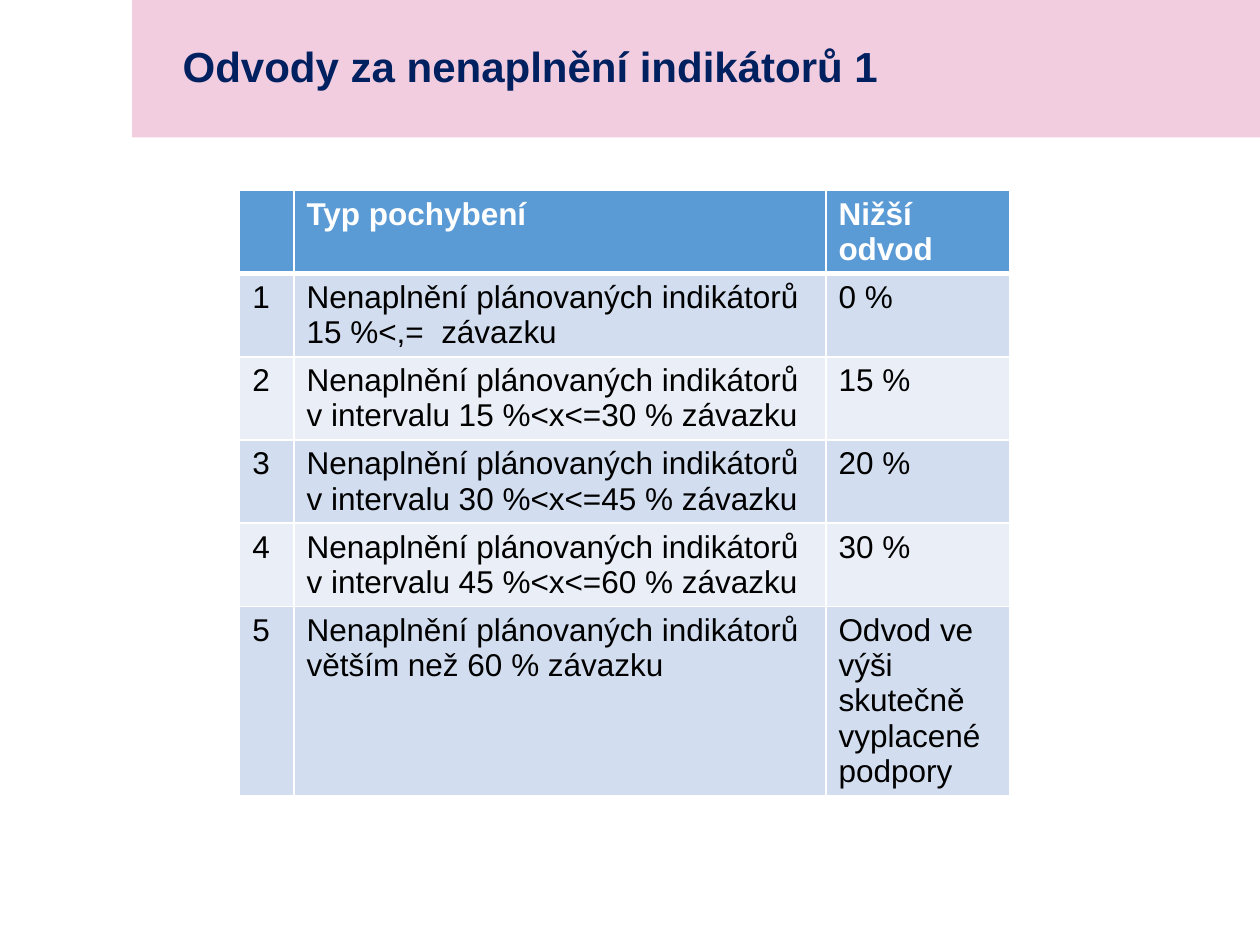
from dataclasses import dataclass

from lxml import etree
from pptx import Presentation
from pptx.dml.color import RGBColor
from pptx.enum.shapes import MSO_SHAPE
from pptx.enum.text import MSO_ANCHOR, MSO_AUTO_SIZE, PP_ALIGN
from pptx.oxml.ns import qn
from pptx.util import Pt

RECT = MSO_SHAPE.RECTANGLE
MIDDLE = MSO_ANCHOR.MIDDLE
NO_FIT = MSO_AUTO_SIZE.NONE
LEFT = PP_ALIGN.LEFT
TITLE_ONLY = 5


@dataclass(frozen=True)
class Theme:
    font: str = "Arial"
    title_size: float = 24
    table_size: float = 18
    band: str = "F2CDE0"
    title: str = "002060"
    header: str = "5B9BD5"
    stripes: tuple = ("D2DEEF", "EAEFF7")
    text: str = "000000"
    light: str = "FFFFFF"


def write(tf, text, *, font, size, color, bold=False, spacing=None):
    """Fill a text frame, one paragraph per line of text."""
    for i, line in enumerate(text.split("\n")):
        p = tf.paragraphs[0] if i == 0 else tf.add_paragraph()
        p.alignment = LEFT
        p.line_spacing = spacing
        p.font.size = Pt(size)
        if not line:
            continue
        r = p.add_run()
        r.text = line
        r.font.name = font
        r.font.size = Pt(size)
        r.font.bold = bold
        r.font.color.rgb = RGBColor.from_string(color)


def set_borders(cell, color, bottom):
    """Draw 1 pt cell borders, with a bottom border of its own width."""
    tc_pr = cell._tc.get_or_add_tcPr()
    for side, width in (("L", 1), ("R", 1), ("T", 1), ("B", bottom)):
        ln = etree.SubElement(tc_pr, qn(f"a:ln{side}"), w=str(Pt(width)))
        fill = etree.SubElement(ln, qn("a:solidFill"))
        etree.SubElement(fill, qn("a:srgbClr"), val=color)


class SlideBuilder:
    def __init__(self, prs, theme):
        self.theme = theme
        self.s = prs.slides.add_slide(prs.slide_layouts[TITLE_ONLY])

    def band(self, x, y, w, h):
        sp = self.s.shapes.add_shape(RECT, Pt(x), Pt(y), Pt(w), Pt(h))
        sp.shadow.inherit = False
        sp.fill.solid()
        sp.fill.fore_color.rgb = RGBColor.from_string(self.theme.band)
        sp.line.fill.background()
        # Keep the band behind the title
        self.s.shapes.title.element.addprevious(sp.element)

    def title(self, text, x, y, w, h):
        t = self.theme
        sp = self.s.shapes.title
        sp.left, sp.top, sp.width, sp.height = Pt(x), Pt(y), Pt(w), Pt(h)
        tf = sp.text_frame
        tf.word_wrap = True
        tf.auto_size = NO_FIT
        tf.vertical_anchor = MIDDLE
        write(tf, text, font=t.font, size=t.title_size, color=t.title,
              bold=True, spacing=0.9)

    def table(self, rows, x, y, widths, heights):
        t = self.theme
        table = self.s.shapes.add_table(
            len(rows), len(widths), Pt(x), Pt(y),
            Pt(sum(widths)), Pt(sum(heights))).table
        for column, width in zip(table.columns, widths):
            column.width = Pt(width)
        for i, (row, height) in enumerate(zip(rows, heights)):
            table.rows[i].height = Pt(height)
            header = i == 0
            fill = t.header if header else t.stripes[(i - 1) % 2]
            for j, text in enumerate(row):
                cell = table.cell(i, j)
                set_borders(cell, t.light, bottom=3 if header else 1)
                cell.fill.solid()
                cell.fill.fore_color.rgb = RGBColor.from_string(fill)
                write(cell.text_frame, text, font=t.font, size=t.table_size,
                      color=t.light if header else t.text, bold=header)


def main():
    prs = Presentation()
    prs.slide_width, prs.slide_height = Pt(720), Pt(540)

    failure = "Nenaplnění plánovaných indikátorů"
    levels = [
        (f"{failure}\n15 %<,=  závazku", "0 %"),
        (f"{failure} v intervalu 15 %<x<=30 % závazku", "15 %"),
        (f"{failure} v intervalu 30 %<x<=45 % závazku", "20 %"),
        (f"{failure} v intervalu 45 %<x<=60 % závazku", "30 %"),
        (f"{failure} větším než 60 % závazku",
         "Odvod ve výši skutečně vyplacené podpory"),
    ]
    rows = [("", "Typ pochybení", "Nižší odvod")]
    rows += [(str(n), *level) for n, level in enumerate(levels, 1)]

    slide = SlideBuilder(prs, Theme())
    slide.band(75.5, 0, 644.5, 78.5)
    slide.title("Odvody za nenaplnění indikátorů 1", 97.2, 0, 601.2, 78.5)
    slide.table(rows, 137, 108.8, widths=(31, 304, 105),
                heights=[47.5] * 5 + [107.5])
    prs.save("out.pptx")


if __name__ == "__main__":
    main()
